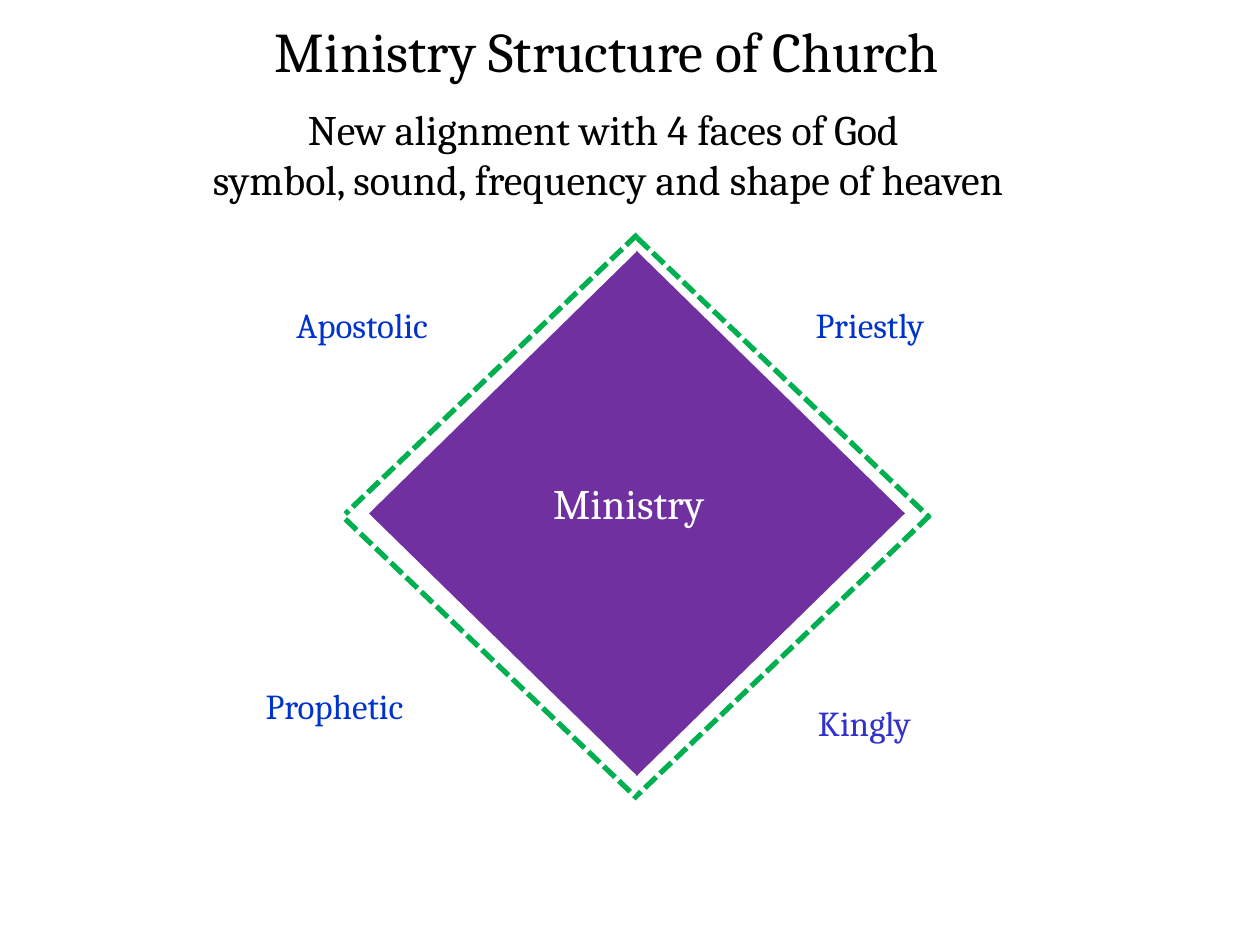
from lxml.etree import SubElement
from pptx import Presentation
from pptx.dml.color import RGBColor
from pptx.enum.dml import MSO_LINE
from pptx.enum.shapes import MSO_CONNECTOR, MSO_SHAPE
from pptx.enum.text import MSO_ANCHOR, MSO_AUTO_SIZE, PP_ALIGN
from pptx.oxml.ns import qn
from pptx.util import Pt

BLACK = RGBColor(0x00, 0x00, 0x00)
WHITE = RGBColor(0xFF, 0xFF, 0xFF)
BLUE = RGBColor(0x00, 0x33, 0xCC)
VIOLET_BLUE = RGBColor(0x33, 0x33, 0xCC)
PURPLE = RGBColor(0x70, 0x30, 0xA0)
GREEN = RGBColor(0x00, 0xB0, 0x50)

CENTER_X, CENTER_Y = 364.3, 293.4
BORDER_RUN, BORDER_RISE = 167, 159.8
TRIANGLE_BASE, TRIANGLE_HEIGHT = 300.2, 153.4

FRAME_FORMAT = dict(
    margin_left=0, margin_top=0, margin_right=0, margin_bottom=0,
    word_wrap=True, auto_size=MSO_AUTO_SIZE.NONE,
    vertical_anchor=MSO_ANCHOR.TOP,
)

# wording, left, top, width, height, size, colour
LABELS = [
    ("New alignment with 4 faces of God \vsymbol, sound, frequency and shape of heaven",
     100.8, 59, 493.2, 66.2, 24, BLACK),
    ("Ministry", 311, 272.9, 96.5, 28.8, 24, WHITE),
    ("Apostolic", 154.1, 173.5, 105.8, 23.8, 20, BLUE),
    ("Priestly", 444.2, 173.5, 105.8, 23.8, 20, BLUE),
    ("Prophetic", 123.1, 391, 136.1, 23.8, 20, BLUE),
    ("Kingly", 448.6, 401, 90.7, 24.5, 20, VIOLET_BLUE),
]


def write_text(shape, wording, size, color):
    frame = shape.text_frame
    for name, value in FRAME_FORMAT.items():
        setattr(frame, name, value)
    frame.text = wording
    paragraph = frame.paragraphs[0]
    paragraph.alignment = PP_ALIGN.CENTER
    for run in paragraph.runs:
        for name, value in dict(name="Cambria", size=Pt(size), bold=False).items():
            setattr(run.font, name, value)
        run.font.color.rgb = color


def add_title(slide):
    title = slide.shapes.title
    box = dict(left=66.2, top=9.4, width=561.6, height=38.9)
    for name, value in box.items():
        setattr(title, name, Pt(value))
    write_text(title, "Ministry Structure of Church", 32, BLACK)


def add_label(slide, wording, left, top, width, height, size, color):
    label = slide.shapes.add_textbox(Pt(left), Pt(top), Pt(width), Pt(height))
    write_text(label, wording, size, color)


def add_dashed_line(group, x1, y1, x2, y2):
    edge = group.shapes.add_connector(
        MSO_CONNECTOR.STRAIGHT, Pt(x1), Pt(y1), Pt(x2), Pt(y2))
    edge.line.color.rgb = GREEN
    edge.line.width = Pt(3)
    edge.line.dash_style = MSO_LINE.SQUARE_DOT
    SubElement(edge.element.spPr, qn("a:effectLst"))


def add_border(group):
    """Draw the four edges, each from its own starting height."""
    left, right = CENTER_X - BORDER_RUN, CENTER_X + BORDER_RUN
    for x1, x2, top in [
        (CENTER_X, left, 133.9),
        (CENTER_X, right, 136.1),
        (right, CENTER_X, 294.5),
        (left, CENTER_X, 296.6),
    ]:
        add_dashed_line(group, x1, top, x2, top + BORDER_RISE)


def add_half_diamond(group, side):
    """Side is 1 for the half that points right, -1 for left."""
    middle = CENTER_X - 0.3 + side * 76.4
    half = group.shapes.add_shape(
        MSO_SHAPE.ISOSCELES_TRIANGLE,
        Pt(middle - TRIANGLE_BASE / 2), Pt(CENTER_Y - TRIANGLE_HEIGHT / 2),
        Pt(TRIANGLE_BASE), Pt(TRIANGLE_HEIGHT))
    half.rotation = side * 90 % 360
    half.shadow.inherit = False
    half.fill.solid()
    half.fill.fore_color.rgb = PURPLE
    half.line.fill.background()


def main():
    deck = Presentation()
    deck.slide_width, deck.slide_height = Pt(720), Pt(540)
    slide = deck.slides.add_slide(deck.slide_layouts[5])

    add_title(slide)
    diamond = slide.shapes.add_group_shape()
    add_border(diamond)
    for side in (1, -1):
        add_half_diamond(diamond, side)
    for label in LABELS:
        add_label(slide, *label)

    deck.save("out.pptx")


if __name__ == "__main__":
    main()
